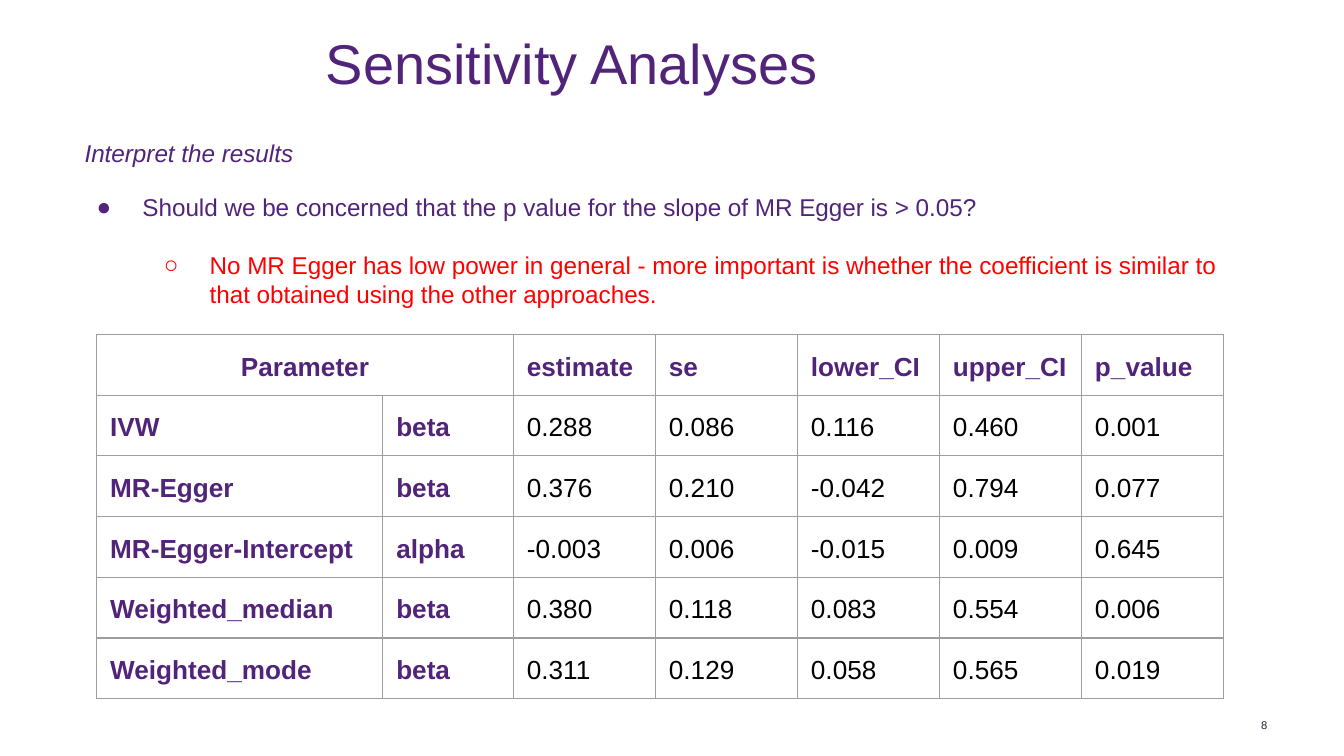
from lxml import etree
from pptx import Presentation
from pptx.dml.color import RGBColor
from pptx.enum.text import MSO_ANCHOR, MSO_AUTO_SIZE, PP_ALIGN
from pptx.oxml.ns import qn
from pptx.util import Pt

PURPLE = RGBColor(0x51, 0x24, 0x7A)
DARK = RGBColor(0x2B, 0x1D, 0x37)
RED = RGBColor(0xFF, 0x00, 0x00)
BLACK = RGBColor(0x00, 0x00, 0x00)
GREY = RGBColor(0x9E, 0x9E, 0x9E)

LEFT, CENTER, RIGHT = PP_ALIGN.LEFT, PP_ALIGN.CENTER, PP_ALIGN.RIGHT
TOP, MIDDLE = MSO_ANCHOR.TOP, MSO_ANCHOR.MIDDLE
NO_AUTOFIT = MSO_AUTO_SIZE.NONE

FONT = "Arial"
INSET = 7.2

POINTS = [
    (0, "●", PURPLE, "Should we be concerned that the p value for the slope of MR Egger is > 0.05?"),
    (1, "○", RED, "No MR Egger has low power in general - more important is whether the "
                  "coefficient is similar to that obtained using the other approaches."),
]
RESULTS = [
    ["Parameter", "", "estimate", "se", "lower_CI", "upper_CI", "p_value"],
    ["IVW", "beta", "0.288", "0.086", "0.116", "0.460", "0.001"],
    ["MR-Egger", "beta", "0.376", "0.210", "-0.042", "0.794", "0.077"],
    ["MR-Egger-Intercept", "alpha", "-0.003", "0.006", "-0.015", "0.009", "0.645"],
    ["Weighted_median", "beta", "0.380", "0.118", "0.083", "0.554", "0.006"],
    ["Weighted_mode", "beta", "0.311", "0.129", "0.058", "0.565", "0.019"],
]
COLUMN_WIDTHS = [153.3, 70] + [76.1] * 5
ROW_HEIGHT = 32.4


def place(shape, left, top, width, height):
    shape.left, shape.top = Pt(left), Pt(top)
    shape.width, shape.height = Pt(width), Pt(height)


def set_frame(frame, inset, anchor=TOP):
    frame.margin_left = frame.margin_right = Pt(inset)
    frame.margin_top = frame.margin_bottom = Pt(inset)
    frame.vertical_anchor = anchor
    frame.word_wrap = True
    frame.auto_size = NO_AUTOFIT


def write(paragraph, text, size, color, align=LEFT, spacing=1.0, bold=False, italic=False):
    paragraph.text = text
    paragraph.alignment = align
    paragraph.line_spacing = spacing
    font = paragraph.font
    font.name, font.size = FONT, Pt(size)
    font.bold, font.italic = bold, italic
    font.color.rgb = color


def add_bullet(paragraph, symbol, color, indent, hanging):
    properties = paragraph._p.get_or_add_pPr()
    properties.set("marL", str(Pt(indent)))
    properties.set("indent", str(-Pt(hanging)))
    bullet_color = etree.SubElement(properties, qn("a:buClr"))
    etree.SubElement(bullet_color, qn("a:srgbClr"), val=str(color))
    etree.SubElement(properties, qn("a:buFont"), typeface=FONT)
    etree.SubElement(properties, qn("a:buChar"), char=symbol)


def add_title(slide, text):
    title = slide.shapes.title
    place(title, 1.4, 19.4, 609.8, 27.4)
    set_frame(title.text_frame, 0)
    write(title.text_frame.paragraphs[0], text, 30, PURPLE, CENTER, 0.9)


def add_points(slide, points):
    body = slide.placeholders[1]
    place(body, 33.1, 95.8, 628.6, 62.6)
    frame = body.text_frame
    set_frame(frame, INSET)
    for number, (level, symbol, color, text) in enumerate(points):
        paragraph = frame.add_paragraph() if number else frame.paragraphs[0]
        paragraph.level = level
        add_bullet(paragraph, symbol, color, 36 * (level + 1), 24.5)
        paragraph.space_before = Pt(15.5 if number else 0)
        write(paragraph, text, 13, color)


def add_label(slide, box, text, size, color, inset=INSET, anchor=TOP, align=LEFT, italic=False):
    label = slide.shapes.add_textbox(*map(Pt, box))
    set_frame(label.text_frame, inset, anchor)
    write(label.text_frame.paragraphs[0], text, size, color, align, italic=italic)


def add_borders(cell, color, width):
    properties = cell._tc.get_or_add_tcPr()
    for side in ("a:lnL", "a:lnR", "a:lnT", "a:lnB"):
        border = etree.SubElement(properties, qn(side), w=str(Pt(width)))
        fill = etree.SubElement(border, qn("a:solidFill"))
        etree.SubElement(fill, qn("a:srgbClr"), val=str(color))


def add_results(slide, results):
    rows, columns = len(results), len(COLUMN_WIDTHS)
    frame = slide.shapes.add_table(rows, columns, Pt(51.8), Pt(179.2),
                                   Pt(sum(COLUMN_WIDTHS)), Pt(ROW_HEIGHT * rows))
    table = frame.table
    table.first_row = table.horz_banding = False
    for column, width in zip(table.columns, COLUMN_WIDTHS):
        column.width = Pt(width)
    for row in table.rows:
        row.height = Pt(ROW_HEIGHT)
    table.cell(0, 0).merge(table.cell(0, 1))
    for r, values in enumerate(results):
        for c, value in enumerate(values):
            cell = table.cell(r, c)
            add_borders(cell, GREY, 0.75)
            cell.fill.background()
            cell.margin_left = cell.margin_right = Pt(INSET)
            cell.margin_top = cell.margin_bottom = Pt(INSET)
            if cell.is_spanned:
                continue
            heading = r == 0 or c < 2
            write(cell.text_frame.paragraphs[0], value, 14, PURPLE if heading else BLACK,
                  CENTER if cell.is_merge_origin else LEFT, 1.15, bold=heading)


def main():
    deck = Presentation()
    deck.slide_width, deck.slide_height = Pt(720), Pt(405)
    slide = deck.slides.add_slide(deck.slide_layouts[1])
    add_title(slide, "Sensitivity Analyses")
    add_label(slide, (661.7, 385.2, 17.3, 6.5), "8", 6, DARK, 0, MIDDLE, RIGHT)
    add_points(slide, POINTS)
    add_results(slide, RESULTS)
    add_label(slide, (38.2, 67, 133.2, 31.7), "Interpret the results", 13, PURPLE, italic=True)
    deck.save("out.pptx")


if __name__ == "__main__":
    main()
